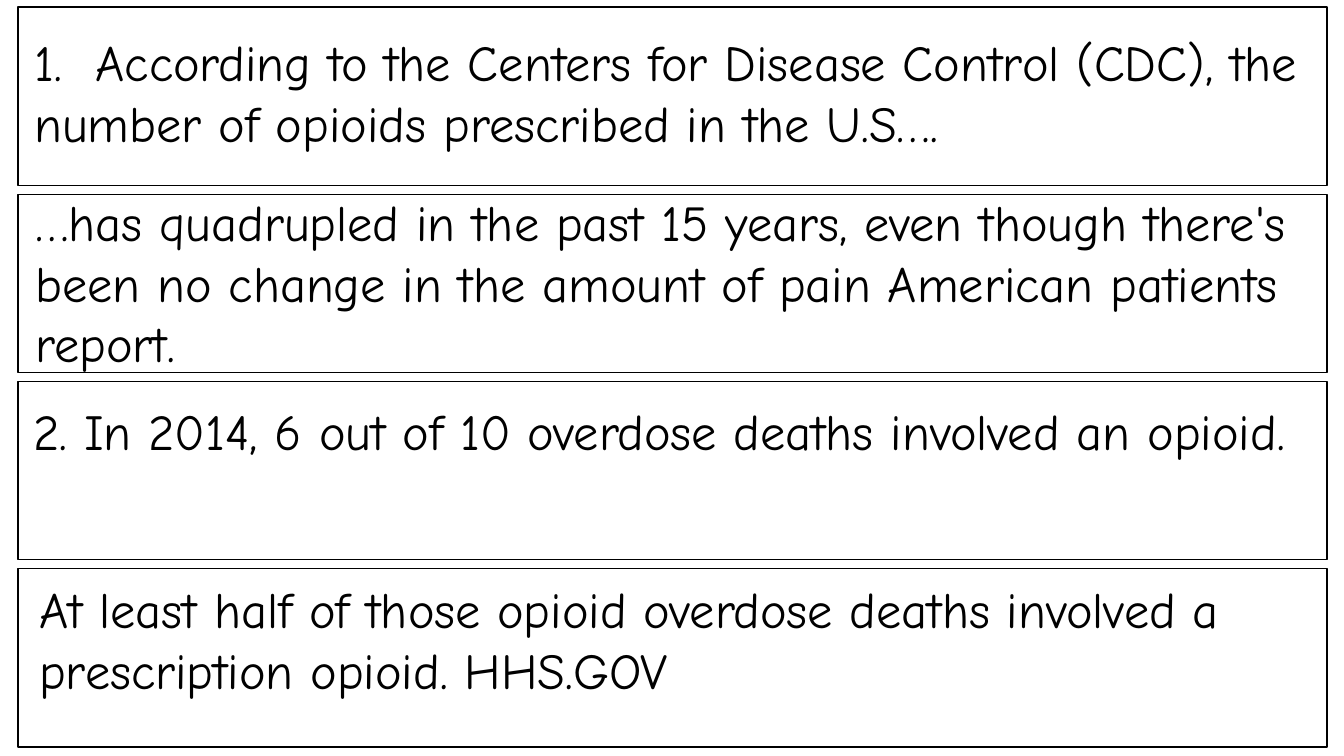
from pptx import Presentation
from pptx import util as u
from pptx.dml import color
from pptx.enum import shapes, text

COLORS = {"paper": "FFFFFF", "ink": "000000"}
FONT = "Comic Neue"

# Card grid
CARD_LEFT, CARD_TOP = 0.18, 0.07
CARD_WIDTH, CARD_HEIGHT = 12.98, 1.77
CARD_PITCH = 1.857
TEXT_WIDTH = 12.85

# Each fact: left, top and height of its text, then the wording
FACTS = [
    (0.24, 0.26, 1.31, "1.  According to the Centers for Disease Control (CDC), "
                       "the number of opioids prescribed in the U.S…."),
    (0.25, 1.85, 1.92, "…has quadrupled in the past 15 years, even though there's "
                       "been no change in the amount of pain American patients report."),
    (0.23, 3.92, 1.31, "2. In 2014, 6 out of 10 overdose deaths involved an opioid."),
    (0.29, 5.69, 1.31, "At least half of those opioid overdose deaths involved "
                       "a prescription opioid. HHS.GOV"),
]


def rgb(name):
    return color.RGBColor.from_string(COLORS[name])


def add_card(slide, top):
    shape = slide.shapes.add_shape(
        shapes.MSO_SHAPE.RECTANGLE, u.Inches(CARD_LEFT), u.Inches(top),
        u.Inches(CARD_WIDTH), u.Inches(CARD_HEIGHT))
    shape.shadow.inherit = False
    shape.fill.solid()
    shape.fill.fore_color.rgb = rgb("paper")
    shape.line.color.rgb = rgb("ink")
    shape.line.width = u.Pt(1)


def add_fact(slide, left, top, height, wording):
    box = slide.shapes.add_textbox(
        u.Inches(left), u.Inches(top), u.Inches(TEXT_WIDTH), u.Inches(height))
    frame = box.text_frame
    frame.word_wrap = True
    frame.auto_size = text.MSO_AUTO_SIZE.SHAPE_TO_FIT_TEXT
    run = frame.paragraphs[0].add_run()
    run.text = wording
    run.font.name = FONT
    run.font.size = u.Pt(36)
    run.font.color.rgb = rgb("ink")


def main():
    presentation = Presentation()
    presentation.slide_width = u.Inches(13.33)
    presentation.slide_height = u.Inches(7.5)
    slide = presentation.slides.add_slide(presentation.slide_layouts[6])

    # Outlined cards, behind all the text
    for row in range(len(FACTS)):
        add_card(slide, CARD_TOP + row * CARD_PITCH)

    # Wording of the facts
    for fact in FACTS:
        add_fact(slide, *fact)

    presentation.save("out.pptx")


if __name__ == "__main__":
    main()
